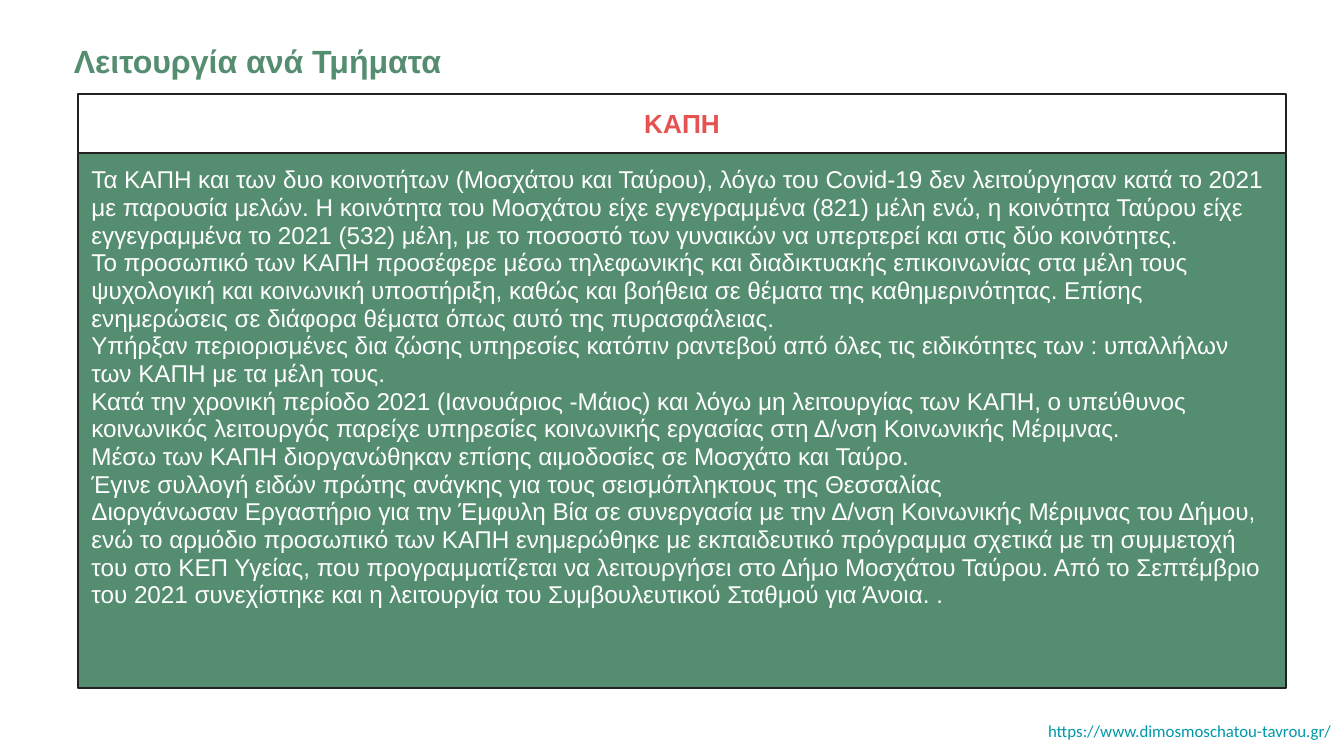
from pptx import Presentation
from pptx.dml.color import RGBColor
from pptx.enum.shapes import MSO_SHAPE
from pptx.enum.text import MSO_ANCHOR, MSO_AUTO_SIZE, PP_ALIGN
from pptx.oxml.ns import qn
from pptx.util import Inches, Pt

# Content
TITLE = "Λειτουργία ανά Τμήματα"
HEAD = "ΚΑΠΗ"
LINK = "https://www.dimosmoschatou-tavrou.gr/"
BODY = [
    "Τα ΚΑΠΗ και των δυο κοινοτήτων (Μοσχάτου και Ταύρου), λόγω του Coνid-19 δεν "
    "λειτούργησαν κατά το 2021 με παρουσία μελών. Η κοινότητα του Μοσχάτου είχε "
    "εγγεγραμμένα (821) μέλη ενώ, η κοινότητα Ταύρου είχε εγγεγραμμένα το 2021 (532) "
    "μέλη, με το ποσοστό των γυναικών να υπερτερεί και στις δύο κοινότητες.",
    "Το προσωπικό των ΚΑΠΗ προσέφερε μέσω τηλεφωνικής και διαδικτυακής επικοινωνίας "
    "στα μέλη τους ψυχολογική και κοινωνική υποστήριξη, καθώς και βοήθεια σε θέματα "
    "της καθημερινότητας. Επίσης ενημερώσεις σε διάφορα θέματα όπως αυτό της "
    "πυρασφάλειας.",
    "Υπήρξαν περιορισμένες δια ζώσης υπηρεσίες κατόπιν ραντεβού από όλες τις "
    "ειδικότητες των : υπαλλήλων των ΚΑΠΗ με τα μέλη τους.",
    "Κατά την χρονική περίοδο 2021 (Ιανουάριος -Μάιος) και λόγω μη λειτουργίας των "
    "ΚΑΠΗ, ο υπεύθυνος κοινωνικός λειτουργός παρείχε υπηρεσίες κοινωνικής εργασίας "
    "στη Δ/νση Κοινωνικής Μέριμνας.",
    "Μέσω των ΚΑΠΗ διοργανώθηκαν επίσης αιμοδοσίες σε Μοσχάτο και Ταύρο.",
    "Έγινε συλλογή ειδών πρώτης ανάγκης για τους σεισμόπληκτους της Θεσσαλίας",
    "Διοργάνωσαν Εργαστήριο για την Έμφυλη Βία σε συνεργασία με την Δ/νση Κοινωνικής "
    "Μέριμνας του Δήμου, ενώ το αρμόδιο προσωπικό των ΚΑΠΗ ενημερώθηκε με "
    "εκπαιδευτικό πρόγραμμα σχετικά με τη συμμετοχή του στο ΚΕΠ Υγείας, που "
    "προγραμματίζεται να λειτουργήσει στο Δήμο Μοσχάτου Ταύρου. Από το Σεπτέμβριο "
    "του 2021 συνεχίστηκε και η λειτουργία του Συμβουλευτικού Σταθμού για Άνοια. .",
]

GREEN, RED, TEAL, WHITE, DARK = "548D6F", "E6524F", "0097A7", "FFFFFF", "212121"

# Panel: heading strip stacked on the body
LEFT, TOP, WIDE, STRIP, TALL = 0.58, 0.7, 8.99, 0.44, 3.98


def color(code):
    return RGBColor.from_string(code)


def place(shape, *box):
    shape.left, shape.top, shape.width, shape.height = map(Inches, box)


def write(shape, text, size, tint, align=PP_ALIGN.LEFT, bold=False,
          font="Arial", pitch=1.0):
    frame = shape.text_frame
    frame.word_wrap = True
    frame.auto_size = MSO_AUTO_SIZE.NONE
    frame.vertical_anchor = MSO_ANCHOR.TOP
    frame.margin_left = frame.margin_right = Inches(0.1)
    frame.margin_top = frame.margin_bottom = Inches(0.1)
    par = frame.paragraphs[0]
    par.text = text
    props = par._p.get_or_add_pPr()
    props.set("marL", "0")
    props.set("indent", "0")
    props.append(props.makeelement(qn("a:buNone"), {}))
    par.alignment = align
    par.line_spacing = pitch
    par.space_before = Pt(0)
    par.font.name, par.font.size, par.font.bold = font, Pt(size), bold
    par.font.color.rgb = color(tint)


def border(shape, fill=None):
    if fill:
        shape.fill.solid()
        shape.fill.fore_color.rgb = color(fill)
    else:
        shape.fill.background()
    shape.line.color.rgb = color(DARK)
    shape.line.width = Pt(0.75)


# A 16:9 slide
deck = Presentation()
deck.slide_width, deck.slide_height = Inches(10), Inches(10 * 9 / 16)
slide = deck.slides.add_slide(deck.slide_layouts[1])

# Title
title = slide.shapes.title
place(title, 0.45, 0.21, 9.21, 0.44)
write(title, TITLE, 17.2, GREEN, bold=True)

# Web address
link = slide.shapes.add_textbox(*map(Inches, (7.18, 5.26, 2.82, 0.35)))
write(link, LINK, 9, TEAL, PP_ALIGN.RIGHT, font="Calibri")

# Body: one paragraph with line breaks
body = slide.placeholders[1]
place(body, LEFT, TOP + STRIP, WIDE, TALL)
border(body, GREEN)
write(body, "\v".join(BODY), 13, WHITE, pitch=0.95)

# Heading strip
head = slide.shapes.add_shape(
    MSO_SHAPE.RECTANGLE, *map(Inches, (LEFT, TOP, WIDE, STRIP)))
head.shadow.inherit = False
border(head)
write(head, HEAD, 14, RED, PP_ALIGN.CENTER, bold=True)

deck.save("out.pptx")
